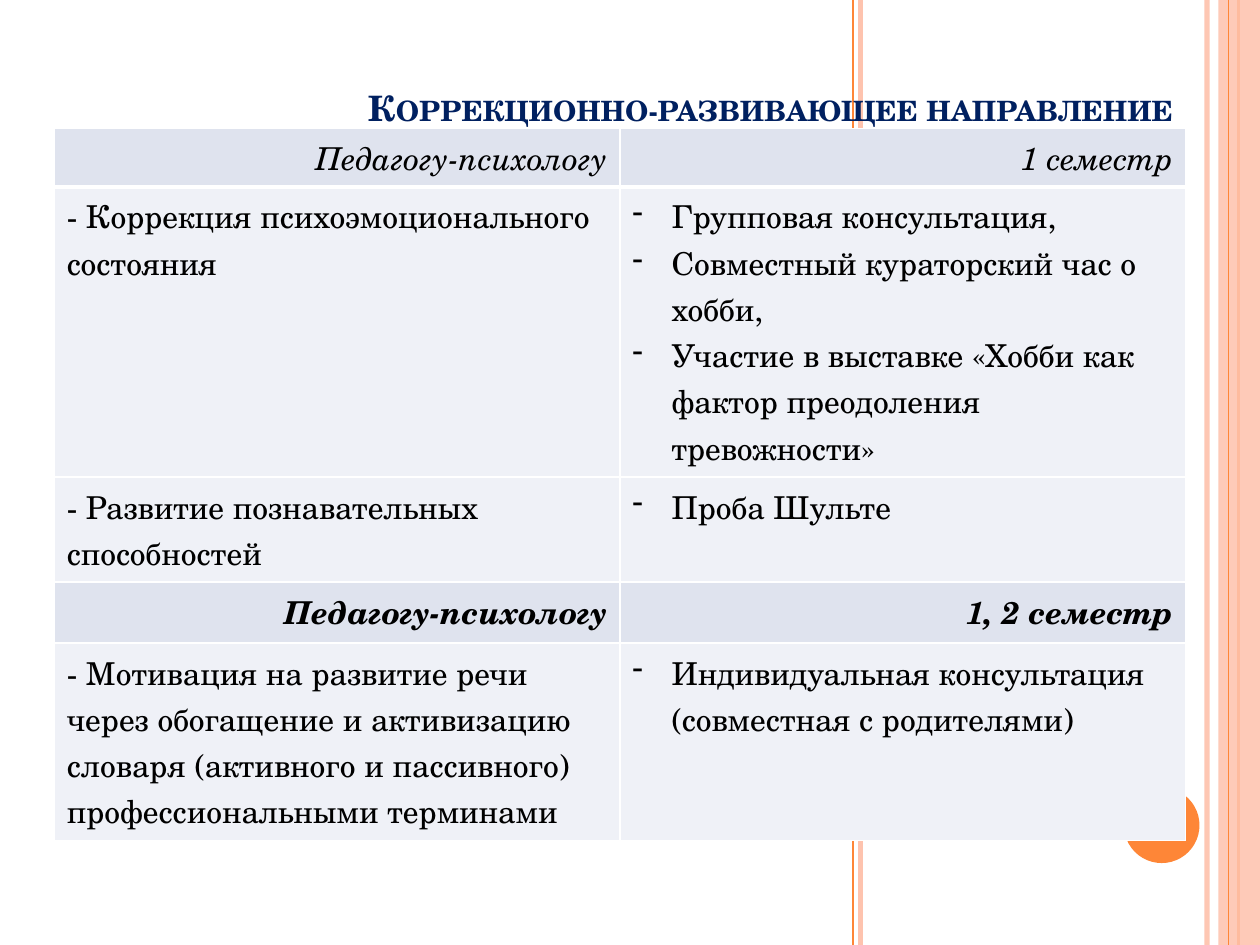
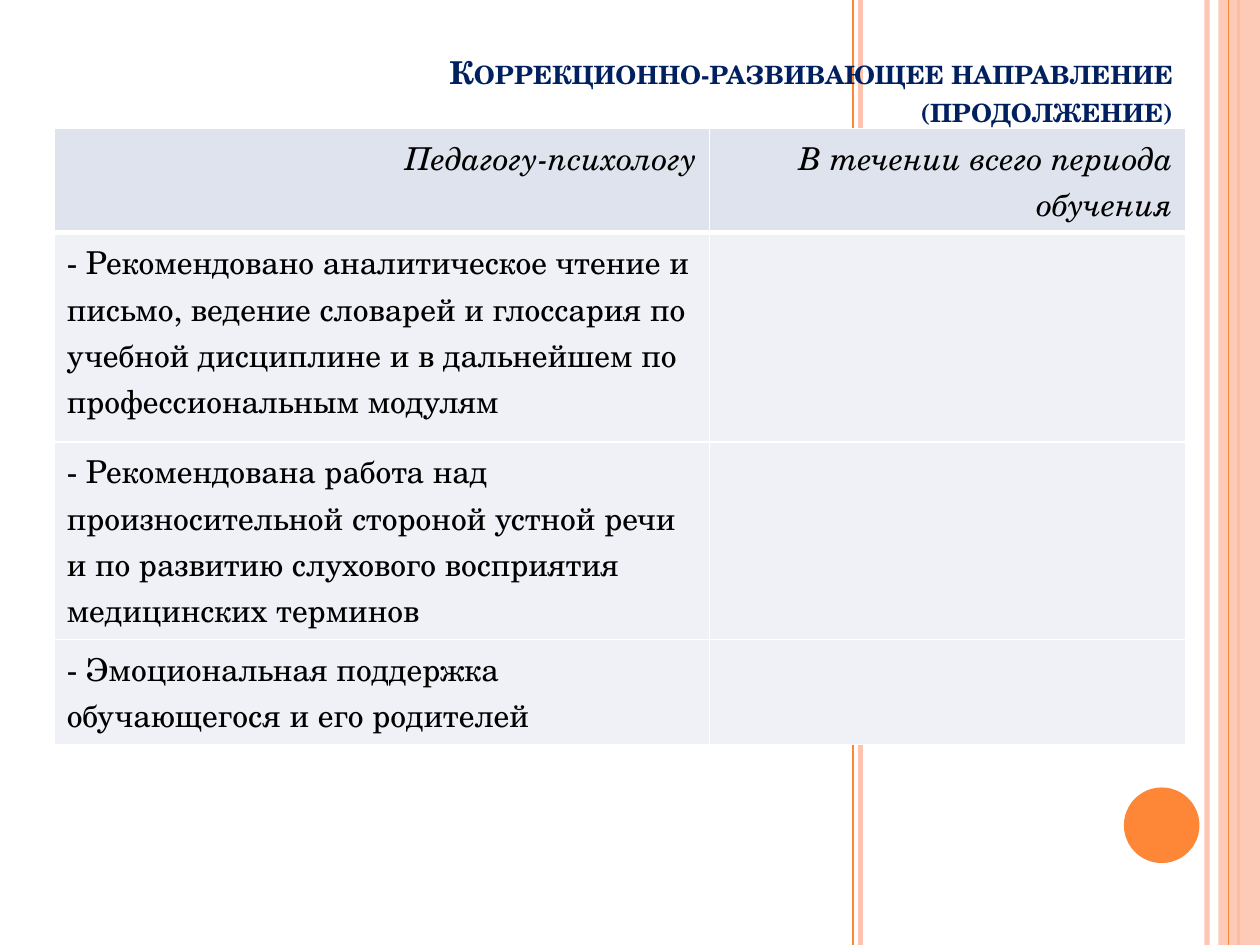
from lxml.etree import SubElement
from pptx import Presentation
from pptx.dml.color import RGBColor
from pptx.enum.shapes import MSO_CONNECTOR, MSO_SHAPE
from pptx.enum.text import MSO_ANCHOR, MSO_AUTO_SIZE, PP_ALIGN
from pptx.oxml import parse_xml
from pptx.oxml.ns import nsdecls, qn
from pptx.util import Inches, Pt

FONT = "TeX Gyre Schola"
COLORS = {
    "orange": "FE8637",
    "peach": "FEC3AE",
    "title": "002060",
    "text": "000000",
    "header": "DFE3EE",
    "body": "EFF1F7",
    "border": "FFFFFF",
}
SPECIALIST = "Педагогу-психологу"
BULLET_INDENT = Inches(0.31)

# Row kinds: "header", "strong header" (bold) and "body".
# A tuple in a cell is a bulleted list.
SEMESTER_ROWS = [
    ("header", SPECIALIST, "1 семестр"),
    ("body", "- Коррекция психоэмоционального состояния",
     ("Групповая консультация,",
      "Совместный кураторский час о хобби,",
      "Участие в выставке «Хобби как фактор преодоления тревожности»")),
    ("body", "- Развитие познавательных способностей", ("Проба Шульте",)),
    ("strong header", SPECIALIST, "1, 2 семестр"),
    ("body", "- Мотивация на развитие речи через обогащение и активизацию "
     "словаря (активного и пассивного) профессиональными терминами",
     ("Индивидуальная консультация (совместная с родителями)",)),
]
WHOLE_PERIOD_ROWS = [
    ("header", SPECIALIST, "В течении всего периода обучения"),
    ("body", "- Рекомендовано аналитическое чтение и письмо, ведение словарей "
     "и глоссария по учебной дисциплине и в дальнейшем по "
     "профессиональным модулям", ""),
    ("body", "- Рекомендована работа над произносительной стороной устной речи "
     "и по развитию слухового восприятия медицинских терминов", ""),
    ("body", "- Эмоциональная поддержка обучающегося и его родителей", ""),
]


def color(name):
    return RGBColor.from_string(COLORS[name])


def set_opacity(shape, percent):
    for node in shape.element.iter(qn("a:srgbClr")):
        SubElement(node, qn("a:alpha"), val=str(percent * 1000))


def add_stripe(slide, left, color_name, width):
    stripe = slide.shapes.add_connector(
        MSO_CONNECTOR.STRAIGHT, Inches(left), 0, Inches(left), Inches(7.5))
    stripe.line.color.rgb = color(color_name)
    stripe.line.width = Pt(width)
    SubElement(stripe.element.spPr, qn("a:effectLst"))
    return stripe


def add_plain_shape(slide, kind, left, top, width, height, color_name):
    shape = slide.shapes.add_shape(
        kind, Inches(left), Inches(top), Inches(width), Inches(height))
    shape.shadow.inherit = False
    shape.fill.solid()
    shape.fill.fore_color.rgb = color(color_name)
    shape.line.fill.background()
    return shape


def decorate_layout(layout, slide):
    """Draw the shared stripes and circle, then move them to the layout."""
    edge_stripe = add_stripe(slide, 9.58, "peach", 3)
    set_opacity(edge_stripe, 93)
    decorations = [
        edge_stripe,
        add_stripe(slide, 6.83, "peach", 3),
        add_stripe(slide, 6.77, "orange", 1),
        add_stripe(slide, 9.83, "orange", 1.5),
    ]
    band = add_plain_shape(slide, MSO_SHAPE.RECTANGLE, 9.67, 0, 0.33, 7.5, "peach")
    set_opacity(band, 87)
    decorations += [
        band,
        add_stripe(slide, 9.75, "orange", 0.75),
        add_plain_shape(slide, MSO_SHAPE.OVAL, 8.92, 6.25, 0.6, 0.6, "orange"),
    ]
    for decoration in decorations:
        layout.shapes.element.append(decoration.element)


def format_span(span, size, color_name, bold=False, italic=False):
    span.font.name = FONT
    span.font.size = Pt(size)
    span.font.color.rgb = color(color_name)
    span.font.bold = bold
    span.font.italic = italic


def set_title(slide, text, size):
    title = slide.shapes.title
    title.left, title.top = Inches(2.72), Inches(0.58)
    title.width, title.height = Inches(6.69), Inches(0.49)
    frame = title.text_frame
    frame.text = text
    frame.word_wrap = True
    frame.auto_size = MSO_AUTO_SIZE.NONE
    frame.vertical_anchor = MSO_ANCHOR.BOTTOM
    para = frame.paragraphs[0]
    para.alignment = PP_ALIGN.RIGHT
    span = para.runs[0]
    format_span(span, size, "title", bold=True)
    span.font._element.set("cap", "small")


def add_bullet(para):
    properties = para._p.get_or_add_pPr()
    properties.set("marL", str(BULLET_INDENT))
    properties.set("indent", str(-BULLET_INDENT))
    SubElement(properties, qn("a:buFontTx"))
    SubElement(properties, qn("a:buChar"), char="-")


def set_borders(cell, bottom_width):
    properties = cell._tc.get_or_add_tcPr()
    widths = {"lnL": 1, "lnR": 1, "lnT": 1, "lnB": bottom_width}
    for position, (side, width) in enumerate(widths.items()):
        properties.insert(position, parse_xml(
            f'<a:{side} {nsdecls("a")} w="{Pt(width)}"><a:solidFill>'
            f'<a:srgbClr val="{COLORS["border"]}"/></a:solidFill></a:{side}>'))


def fill_cell(cell, content, kind, bottom_width):
    is_header = kind != "body"
    cell.fill.solid()
    cell.fill.fore_color.rgb = color("header" if is_header else "body")
    set_borders(cell, bottom_width)
    is_list = isinstance(content, tuple)
    cell.text_frame.text = "\n".join(content) if is_list else content
    for para in cell.text_frame.paragraphs:
        para.alignment = PP_ALIGN.RIGHT if is_header else PP_ALIGN.LEFT
        if is_list:
            add_bullet(para)
        for span in para.runs:
            format_span(span, 18, "text", kind == "strong header", is_header)


def add_plan_table(slide, rows, column_widths, row_heights, height):
    frame = slide.shapes.add_table(
        len(rows), len(column_widths),
        Inches(0.43), Inches(1.02), Inches(8.98), Inches(height))
    table = frame.table
    table.first_row = table.horz_banding = False
    for column, width in zip(table.columns, column_widths):
        column.width = Inches(width)
    for row, row_height in zip(table.rows, row_heights):
        row.height = Inches(row_height)
    frame.height = Inches(height)
    for row_index, (kind, *contents) in enumerate(rows):
        bottom_width = 3 if row_index == 0 else 1
        for column_index, content in enumerate(contents):
            fill_cell(table.cell(row_index, column_index), content, kind, bottom_width)


def main():
    deck = Presentation()
    deck.slide_width, deck.slide_height = Inches(10), Inches(7.5)
    layout = deck.slide_layouts.get_by_name("Title Only")

    semester_page = deck.slides.add_slide(layout)
    decorate_layout(layout, semester_page)
    set_title(semester_page, "Коррекционно-развивающее направление", 20)
    add_plan_table(semester_page, SEMESTER_ROWS, [4.49, 4.49], [0.41] * 5, 4.71)

    whole_period_page = deck.slides.add_slide(layout)
    set_title(whole_period_page,
              "Коррекционно-развивающее направление (продолжение)", 18)
    add_plan_table(whole_period_page, WHOLE_PERIOD_ROWS, [5.2, 3.78],
                   [0.42, 1.66, 1.35, 0.73], 4.43)

    deck.save("out.pptx")


if __name__ == "__main__":
    main()
